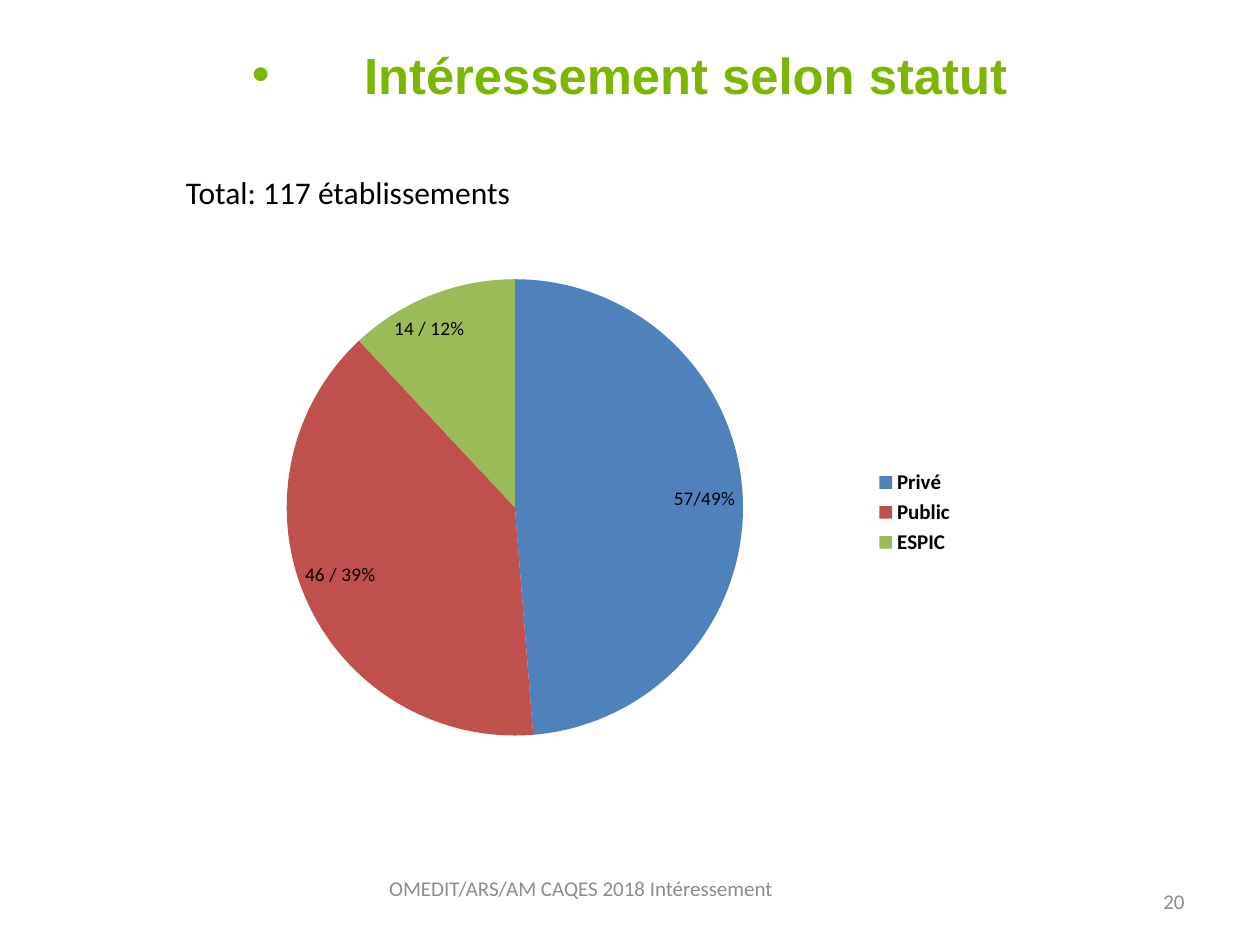
import lxml.etree
import pptx
import pptx.chart.data
import pptx.dml.color
import pptx.enum.chart
import pptx.enum.text
import pptx.oxml
import pptx.oxml.ns
import pptx.util

Cm = pptx.util.Cm
Pt = pptx.util.Pt
Align = pptx.enum.text.PP_ALIGN
Anchor = pptx.enum.text.MSO_ANCHOR

COLOURS = {
    "title": "7AB800",
    "text": "000000",
    "muted": "8C8C8C",
    "Privé": "4F81BD",
    "Public": "C0504D",
    "ESPIC": "9BBB59",
}
STATUSES = [
    ("Privé", 57, "57/49%", (0, 0)),
    ("Public", 46, "46 / 39%", (-0.01, -0.02)),
    ("ESPIC", 14, "14 / 12%", (-0.05, 0.03)),
]


def colour(name):
    """Return the named colour."""
    return pptx.dml.color.RGBColor.from_string(COLOURS[name])


def style_font(font, size, name="text", bold=False, face="Calibri"):
    """Set the face, size, weight and colour of a font."""
    font.name = face
    font.size = Pt(size)
    font.bold = bold
    font.color.rgb = colour(name)


def add_text(page, box, text, size, name="text", bold=False, face="Calibri",
             align=Align.LEFT, anchor=Anchor.TOP, wrap=True):
    """Add a one-paragraph text box and return its frame."""
    frame = page.shapes.add_textbox(*map(Cm, box)).text_frame
    frame.word_wrap = wrap
    frame.vertical_anchor = anchor
    para = frame.paragraphs[0]
    para.alignment = align
    span = para.add_run()
    span.text = text
    style_font(span.font, size, name, bold, face)
    return frame


def add_title(page, box):
    """Add the bulleted, centred title."""
    frame = add_text(page, box, "Intéressement selon statut", 29, "title",
                     bold=True, face="Arial", align=Align.CENTER)
    properties = frame.paragraphs[0]._p.get_or_add_pPr()
    indent = Cm(2.26)
    properties.set("marL", str(indent))
    properties.set("indent", str(-indent))
    for tag, key, value in (("a:buFont", "typeface", "Arial"), ("a:buChar", "char", "•")):
        bullet = lxml.etree.SubElement(properties, pptx.oxml.ns.qn(tag))
        bullet.set(key, value)


def set_layout(parent, position, **settings):
    """Give a chart part a manual layout at a position among its children."""
    for old in parent.findall(pptx.oxml.ns.qn("c:layout")):
        parent.remove(old)
    values = "".join(f'<c:{key} val="{value}"/>' for key, value in settings.items())
    parent.insert(position, pptx.oxml.parse_xml(
        f'<c:layout {pptx.oxml.ns.nsdecls("c")}>'
        f'<c:manualLayout>{values}</c:manualLayout></c:layout>'))


def add_status_pie(page, box):
    """Add the pie of establishments by status."""
    data = pptx.chart.data.CategoryChartData()
    data.categories = [status for status, *_ in STATUSES]
    data.add_series("Series 1", [count for _, count, *_ in STATUSES])
    chart = page.shapes.add_chart(
        pptx.enum.chart.XL_CHART_TYPE.PIE, *map(Cm, box), data).chart
    chart.has_title = False
    style_font(chart.font, 10)
    chart.has_legend = True
    chart.legend.position = pptx.enum.chart.XL_LEGEND_POSITION.RIGHT
    chart.legend.include_in_layout = False
    style_font(chart.legend.font, 12, bold=True)

    plot = chart.plots[0]
    plot.vary_by_categories = True
    set_layout(plot._element.getparent(), 0, layoutTarget="inner", xMode="edge",
               yMode="edge", x=0.14, y=0.03, w=0.58, h=0.92)
    series = plot.series[0]
    labels = series.data_labels
    labels.show_value = True
    labels.show_percentage = True
    style_font(labels.font, 11, bold=True)
    for index, (status, _, caption, (across, down)) in enumerate(STATUSES):
        point = series.points[index]
        point.format.fill.solid()
        point.format.fill.fore_color.rgb = colour(status)
        label = point.data_label
        span = label.text_frame.paragraphs[0].add_run()
        span.text = caption
        style_font(span.font, 11)
        label.position = pptx.enum.chart.XL_LABEL_POSITION.INSIDE_END
        if across or down:
            set_layout(labels._element[index], 1, x=across, y=down)
        for percent in labels._element[index].findall(pptx.oxml.ns.qn("c:showPercent")):
            percent.set("val", "1")


def add_footer(page, box):
    """Add the footer text and the page number on one band."""
    left, top, width, height = box
    frame = add_text(page, (left, top, 10.03, height), "OMEDIT/ARS/AM CAQES 2018 Intéressement",
                     12, "muted", align=Align.CENTER)
    frame.margin_top = 0
    number_width = 5.92
    add_text(page, (left + width - number_width, top, number_width, height), "20",
             12, "muted", align=Align.RIGHT, anchor=Anchor.MIDDLE)


def main():
    """Build and save the deck."""
    deck = pptx.Presentation()
    deck.slide_width, deck.slide_height = Cm(25.4), Cm(19.05)
    page = deck.slides.add_slide(deck.slide_layouts[6])
    add_title(page, (1.27, 0.76, 22.86, 2.36))
    add_footer(page, (6.7, 17.65, 17.43, 1.02))
    add_status_pie(page, (3.5, 5.33, 16, 10))
    add_text(page, (3.5, 3.37, 7.11, 1.02), "Total: 117 établissements", 18, wrap=False)
    deck.save("out.pptx")


if __name__ == "__main__":
    main()
